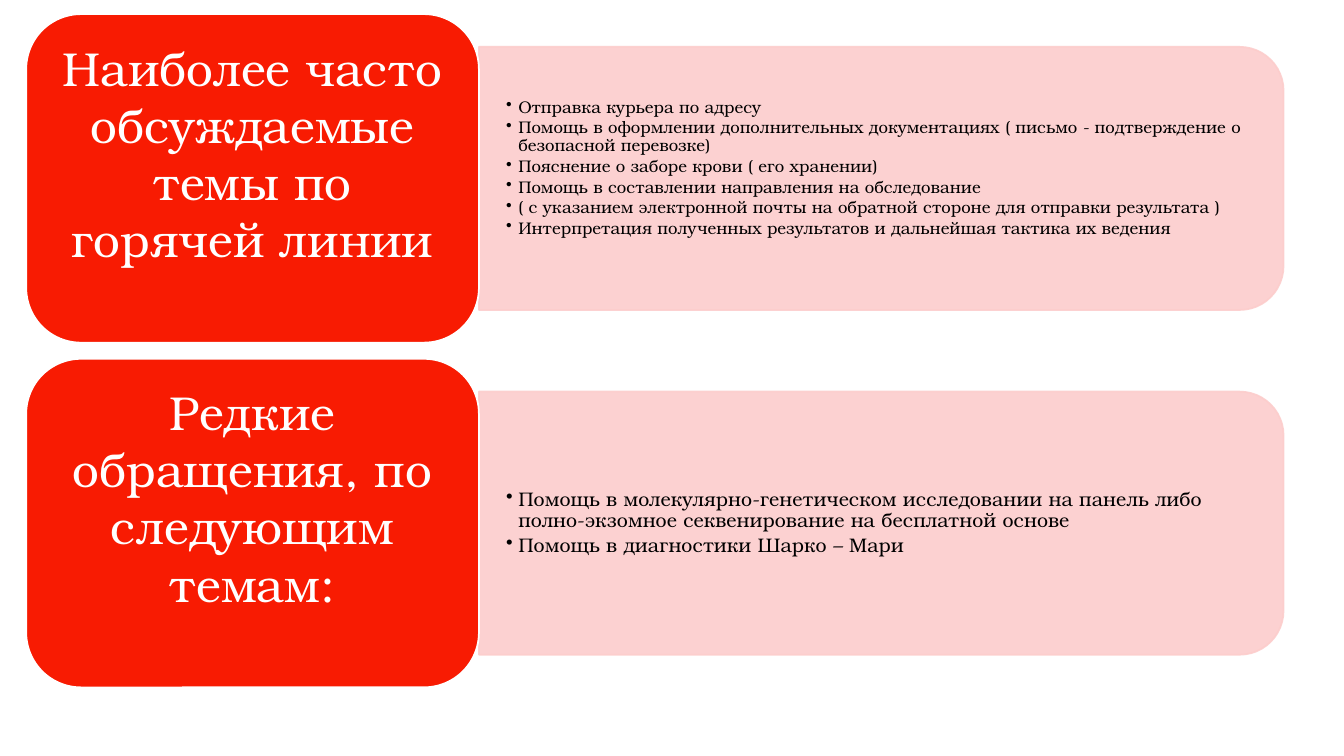
from lxml import etree
from pptx import Presentation
from pptx.dml.color import RGBColor
from pptx.enum.shapes import MSO_SHAPE as Shape
from pptx.enum.text import MSO_ANCHOR as Anchor, PP_ALIGN as Align
from pptx.oxml.ns import qn
from pptx.util import Inches, Pt

# Content: title, bullet size, bottom inset of the bullets, bullets
TOPICS = [
    ("Наиболее часто обсуждаемые темы по горячей линии", 12, 0.34, [
        "Отправка курьера по адресу",
        "Помощь в оформлении дополнительных документациях ( письмо - подтверждение о безопасной перевозке)",
        "Пояснение о заборе крови ( его хранении)",
        "Помощь в составлении направления на обследование",
        "( с указанием электронной почты на обратной стороне для отправки результата )",
        "Интерпретация полученных результатов и дальнейшая тактика их ведения",
    ]),
    ("Редкие обращения, по следующим темам:", 14, 0.14, [
        "Помощь в молекулярно-генетическом исследовании на панель либо "
        "полно-экзомное секвенирование на бесплатной основе",
        "Помощь в диагностики Шарко – Мари",
    ]),
]

# Style
FONT = "TeX Gyre Bonum"
RED = RGBColor(0xF8, 0x1B, 0x02)
PINK = RGBColor(0xFC, 0xCD, 0xCC)
WHITE = RGBColor(0xFF, 0xFF, 0xFF)
BLACK = RGBColor(0, 0, 0)

# Layout in inches
CARD_LEFT, CARD_TOP, CARD_WIDTH, CARD_HEIGHT = 0.26, 0.14, 4.49, 3.26
ROW_PITCH = 3.42
PANEL_LEFT = CARD_LEFT + CARD_WIDTH
PANEL_WIDTH, PANEL_HEIGHT = 7.98, 2.61
TEXT_WIDTH, TEXT_HEIGHT = 7.85, 2.36


def add_box(slide, kind, left, top, width, height, fill, line):
    shape = slide.shapes.add_shape(
        kind, Inches(left), Inches(top), Inches(width), Inches(height))
    shape.shadow.inherit = False
    shape.fill.solid()
    shape.fill.fore_color.rgb = fill
    shape.line.color.rgb = line
    shape.line.width = Pt(1.25)
    return shape


def set_frame(shape, left, top, right, bottom):
    frame = shape.text_frame
    frame.word_wrap = True
    frame.vertical_anchor = Anchor.MIDDLE
    frame.margin_left, frame.margin_top = Inches(left), Inches(top)
    frame.margin_right, frame.margin_bottom = Inches(right), Inches(bottom)
    return frame


def set_font(paragraph, size, color):
    paragraph.font.name = FONT
    paragraph.font.size = Pt(size)
    paragraph.font.color.rgb = color


def add_panel(slide, middle):
    # The preset has its round corners on top, so it is turned to the right
    center = PANEL_LEFT + PANEL_WIDTH / 2
    panel = add_box(slide, Shape.ROUND_2_SAME_RECTANGLE,
                    center - PANEL_HEIGHT / 2, middle - PANEL_WIDTH / 2,
                    PANEL_HEIGHT, PANEL_WIDTH, PINK, PINK)
    panel.rotation = 90
    for color in panel._element.spPr.iter(qn("a:srgbClr")):
        etree.SubElement(color, qn("a:alpha"), val="90000")


def add_bullets(slide, middle, bullets, size, bottom_inset):
    box = slide.shapes.add_textbox(
        Inches(PANEL_LEFT), Inches(middle - TEXT_HEIGHT / 2),
        Inches(TEXT_WIDTH), Inches(TEXT_HEIGHT))
    frame = set_frame(box, 0.27, 0.14, 0.27, bottom_inset)
    for index, text in enumerate(bullets):
        paragraph = frame.add_paragraph() if index else frame.paragraphs[0]
        paragraph.text = text
        paragraph.line_spacing = 0.9
        paragraph.space_after = Pt(0.15 * size)
        set_font(paragraph, size, BLACK)
        properties = paragraph._p.get_or_add_pPr()
        properties.set("marL", str(Inches(0.12)))
        properties.set("indent", str(-Inches(0.12)))
        bullet = etree.Element(qn("a:buChar"), char="•")
        properties.find(qn("a:defRPr")).addprevious(bullet)


def add_card(slide, top, title):
    card = add_box(slide, Shape.ROUNDED_RECTANGLE, CARD_LEFT, top,
                   CARD_WIDTH, CARD_HEIGHT, RED, WHITE)
    # The deep bottom inset lifts the title above the middle
    paragraph = set_frame(card, 0.14, 0.07, 0.14, 0.58).paragraphs[0]
    paragraph.text = title
    paragraph.alignment = Align.CENTER
    set_font(paragraph, 34, WHITE)


def main():
    presentation = Presentation()
    presentation.slide_width = Inches(13.33)
    presentation.slide_height = Inches(7.5)
    slide = presentation.slides.add_slide(presentation.slide_layouts[6])

    # One row per topic
    for row, (title, size, bottom_inset, bullets) in enumerate(TOPICS):
        top = CARD_TOP + row * ROW_PITCH
        middle = top + CARD_HEIGHT / 2
        add_panel(slide, middle)
        add_bullets(slide, middle, bullets, size, bottom_inset)
        add_card(slide, top, title)

    presentation.save("out.pptx")


if __name__ == "__main__":
    main()
